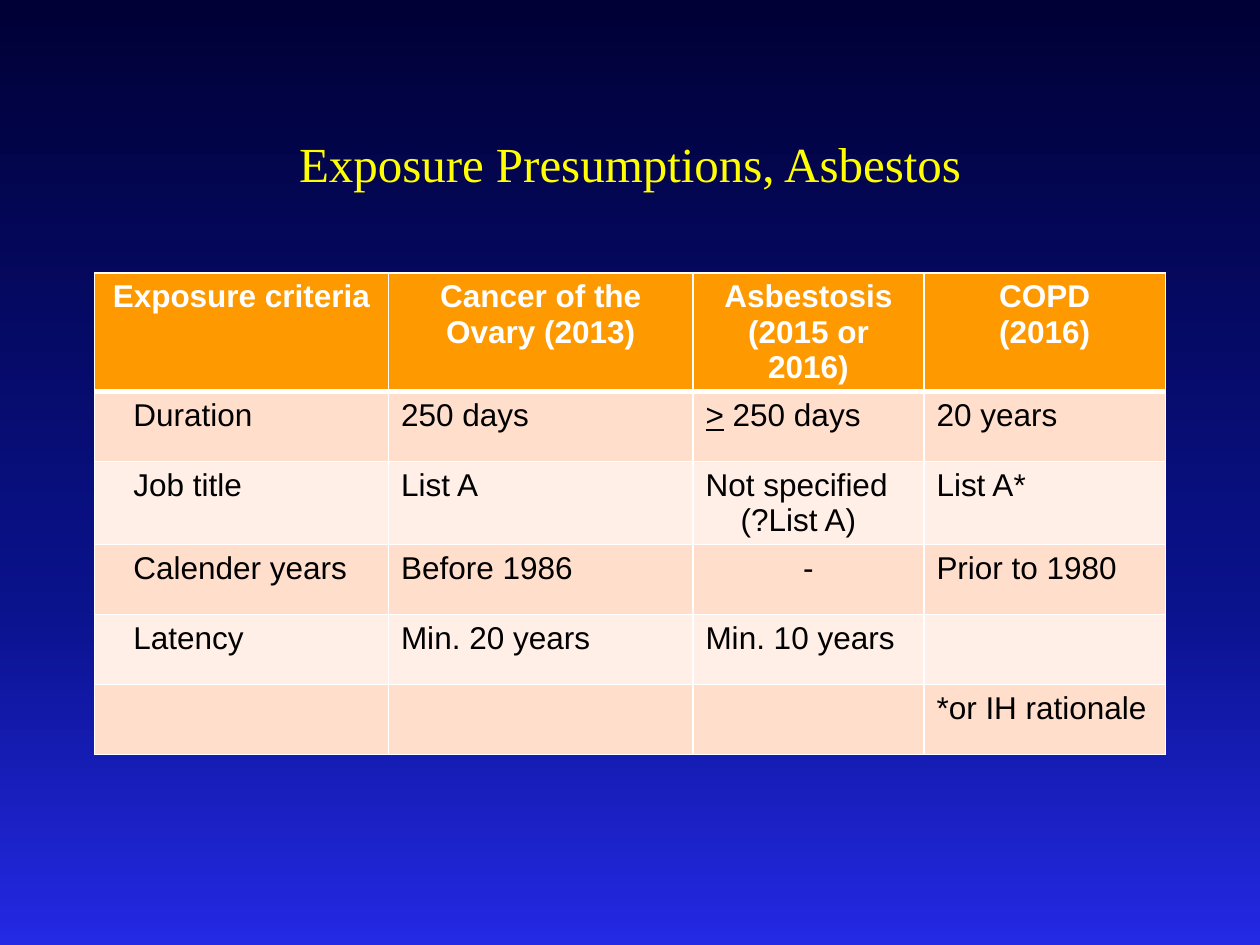
from copy import deepcopy

from lxml import etree
from pptx import Presentation
from pptx.dml.color import RGBColor
from pptx.enum.text import MSO_ANCHOR, PP_ALIGN
from pptx.oxml.ns import qn
from pptx.util import Pt

CENTER, LEFT = PP_ALIGN.CENTER, PP_ALIGN.LEFT
MIDDLE = MSO_ANCHOR.MIDDLE
TITLE_ONLY = 5

COLORS = {
    "title": "FFFF00",
    "header": "FF9900",
    "odd": "FFDECC",
    "even": "FFEFE7",
    "light": "FFFFFF",
    "dark": "000000",
}
BACKDROP = [(0, "000036"), (0.64, "0A128C"), (1, "2429E4")]

COLUMN_WIDTHS = [168, 174, 132, 138]
ROW_HEIGHT = 40
CRITERIA = [
    ["Exposure criteria", "Cancer of the Ovary (2013)", "Asbestosis (2015 or 2016)", "COPD\n(2016)"],
    ["Duration", "250 days", "> 250 days", "20 years"],
    ["Job title", "List A", "Not specified\n(?List A)", "List A*"],
    ["Calender years", "Before 1986", "-", "Prior to 1980"],
    ["Latency", "Min. 20 years", "Min. 10 years", ""],
    ["", "", "", "*or IH rationale"],
]


class SlideWriter:
    def __init__(self, slide):
        self.slide = slide

    def backdrop(self, stops):
        fill = self.slide.background.fill
        fill.gradient()
        fill.gradient_angle = 270
        stop_list = self.slide.element.find(".//" + qn("a:gsLst"))
        stop_list.append(deepcopy(stop_list[-1]))
        for stop, (position, color) in zip(fill.gradient_stops, stops):
            stop.position = position
            stop.color.rgb = RGBColor.from_string(color)

    def style(self, paragraph, font, size, color, align, bold=False):
        paragraph.alignment = align
        paragraph.font.name = font
        paragraph.font.size = Pt(size)
        paragraph.font.bold = bold
        paragraph.font.color.rgb = RGBColor.from_string(COLORS[color])

    def title(self, text, left, top, width, height):
        title = self.slide.shapes.title
        title.left, title.top = Pt(left), Pt(top)
        title.width, title.height = Pt(width), Pt(height)
        title.text_frame.text = text
        title.text_frame.vertical_anchor = MIDDLE
        self.style(title.text_frame.paragraphs[0], "Times New Roman", 28, "title", CENTER)

    def borders(self, cell, bottom):
        properties = cell._tc.get_or_add_tcPr()
        for side, width in (("L", 1), ("R", 1), ("T", 1), ("B", bottom)):
            line = etree.SubElement(properties, qn(f"a:ln{side}"), w=str(Pt(width)))
            solid = etree.SubElement(line, qn("a:solidFill"))
            etree.SubElement(solid, qn("a:srgbClr"), val=COLORS["light"])

    def cell(self, cell, text, row, column):
        header = row == 0
        self.borders(cell, 3 if header else 1)
        cell.fill.solid()
        band = "header" if header else "odd" if row % 2 else "even"
        cell.fill.fore_color.rgb = RGBColor.from_string(COLORS[band])
        cell.text_frame.text = text
        for number, paragraph in enumerate(cell.text_frame.paragraphs):
            align = CENTER if header or text == "-" else LEFT
            self.style(paragraph, "Arial", 18, "light" if header else "dark", align, header)
            if not header and (column == 0 or number > 0):
                indent = 20 if number else 15
                paragraph._p.get_or_add_pPr().set("marL", str(Pt(indent)))
            if text.startswith(">"):
                sign = paragraph.runs[0]
                sign.text = ">"
                sign.font.underline = True
                paragraph.add_run().text = text[1:]

    def table(self, rows, left, top, widths, row_height):
        table = self.slide.shapes.add_table(
            len(rows), len(widths), Pt(left), Pt(top), Pt(sum(widths)), Pt(row_height * len(rows))
        ).table
        for column, width in zip(table.columns, widths):
            column.width = Pt(width)
        for row, texts in enumerate(rows):
            for column, text in enumerate(texts):
                self.cell(table.cell(row, column), text, row, column)


def main():
    presentation = Presentation()
    presentation.slide_width, presentation.slide_height = Pt(720), Pt(540)
    writer = SlideWriter(presentation.slides.add_slide(presentation.slide_layouts[TITLE_ONLY]))
    writer.backdrop(BACKDROP)
    writer.title("Exposure Presumptions, Asbestos", 54, 48, 612, 90)
    writer.table(CRITERIA, 54, 156, COLUMN_WIDTHS, ROW_HEIGHT)
    presentation.save("out.pptx")


if __name__ == "__main__":
    main()
